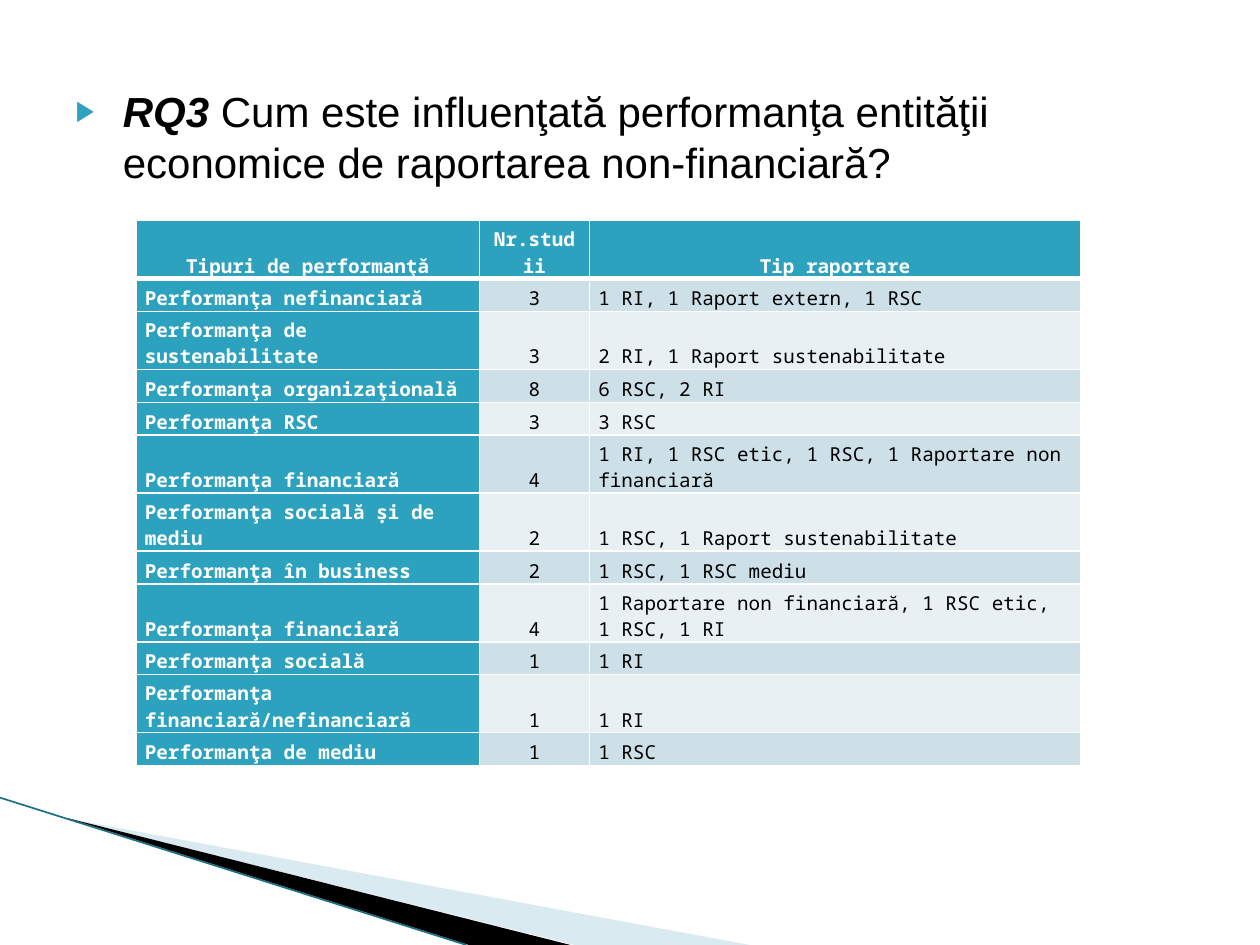
from lxml import etree
from pptx import Presentation
from pptx.dml.color import RGBColor
from pptx.enum import shapes, text
from pptx.oxml import ns
from pptx.util import Cm, Pt

HEX = {
    "teal": "2DA2BF", "deep": "1A7186", "pale": "A0CBDC",
    "odd": "CDE0E8", "even": "E8F0F4", "black": "000000", "white": "FFFFFF",
}
HEAD = ("Tipuri de performanţă", "Nr.studii", "Tip raportare")
# Kind of performance, number of studies, kind of report, lines of text
ROWS = [
    ("Performanţa nefinanciară", "3", "1 RI, 1 Raport extern, 1 RSC", 1),
    ("Performanţa de sustenabilitate", "3", "2 RI, 1 Raport sustenabilitate", 2),
    ("Performanţa organizaţională", "8", "6 RSC, 2 RI", 1),
    ("Performanţa RSC", "3", "3 RSC", 1),
    ("Performanţa financiară", "4",
     "1 RI, 1 RSC etic, 1 RSC, 1 Raportare non financiară", 2),
    ("Performanţa socială ṣi de mediu", "2", "1 RSC, 1 Raport sustenabilitate", 2),
    ("Performanţa în business", "2", "1 RSC, 1 RSC mediu", 1),
    ("Performanţa financiară", "4",
     "1 Raportare non financiară, 1 RSC etic, 1 RSC, 1 RI", 2),
    ("Performanţa socială", "1", "1 RI", 1),
    ("Performanţa financiară/nefinanciară", "1", "1 RI", 2),
    ("Performanţa de mediu", "1", "1 RSC", 1),
]
HIGH = {1: 0.66, 2: 1.17}


def rgb(name):
    return RGBColor.from_string(HEX[name])


def put(item, **vals):
    for key, val in vals.items():
        setattr(item, key, val)


def sub(node, tag, **vals):
    return etree.SubElement(node, ns.qn(tag), **vals)


def style(font, color, **vals):
    put(font, **vals)
    font.color.rgb = rgb(color)


def wedge(slide, left, top, points, color, alpha=None):
    spots = [(Cm(left + x), Cm(top + y)) for x, y in points]
    form = slide.shapes.build_freeform(*spots[0], scale=1.0)
    form.add_line_segments(spots[1:], close=True)
    shape = form.convert_to_shape()
    shape.shadow.inherit = False
    shape.fill.solid()
    shape.fill.fore_color.rgb = rgb(color)
    shape.line.fill.background()
    if alpha:
        tone = shape.fill._xPr.find(".//" + ns.qn("a:srgbClr"))
        sub(tone, "a:alpha", val=str(alpha * 1000))


def corner(slide, left, top, width, height):
    """Swoosh in the lower left corner."""
    wedge(slide, left, top,
          [(1.4, 0.43), (width, height), (11.58, height)], "pale", 40)
    wedge(slide, left, top,
          [(1.35, 0.41), (11.5, height), (9.45, height)], "black")
    edge = slide.shapes.add_connector(
        shapes.MSO_CONNECTOR.STRAIGHT,
        Cm(left), Cm(top), Cm(left + 9.4), Cm(top + height))
    edge.line.width = Pt(0.95)
    edge.line.color.rgb = rgb("deep")
    sub(edge._element.spPr, "a:effectLst")


def question(slide, left, top, width, height):
    """Research question in the body placeholder."""
    body = slide.placeholders[1]
    put(body, left=Cm(left), top=Cm(top), width=Cm(width), height=Cm(height))
    frame = body.text_frame
    put(frame, word_wrap=True, auto_size=text.MSO_AUTO_SIZE.NONE,
        vertical_anchor=text.MSO_ANCHOR.TOP)
    para = frame.paragraphs[0]
    props = para._p.get_or_add_pPr()
    put(props, marL=Cm(1.02), indent=Cm(-0.71))
    sub(sub(props, "a:buClr"), "a:srgbClr", val=HEX["teal"])
    sub(props, "a:buSzPct", val="68000")
    sub(props, "a:buFont", typeface="Arial")
    sub(props, "a:buChar", char="▶")
    put(para, space_before=Pt(0), alignment=text.PP_ALIGN.LEFT)
    parts = [("RQ3 ", True),
             ("Cum este influenţată performanţa entităţii economice "
              "de raportarea non-financiară?", False)]
    for words, strong in parts:
        run = para.add_run()
        run.text = words
        style(run.font, "black", name="Arial", size=Pt(24),
              bold=strong, italic=strong)


def border(cell, head):
    props = cell._tc.get_or_add_tcPr()
    for spot, side in enumerate(("a:lnL", "a:lnR", "a:lnT", "a:lnB")):
        wide = 3 if head and side == "a:lnB" else 1
        line = etree.Element(ns.qn(side), w=str(Pt(wide)))
        sub(sub(line, "a:solidFill"), "a:srgbClr", val=HEX["white"])
        props.insert(spot, line)


def fill_cell(cell, words, row, col):
    strong = row == 0 or col == 0
    put(cell, text=words, vertical_anchor=text.MSO_ANCHOR.BOTTOM,
        margin_left=Cm(0.18), margin_right=Cm(0.18),
        margin_top=0, margin_bottom=0)
    cell.fill.solid()
    shade = "teal" if strong else ("odd" if row % 2 else "even")
    cell.fill.fore_color.rgb = rgb(shade)
    border(cell, row == 0)
    para = cell.text_frame.paragraphs[0]
    mid = row == 0 or col == 1
    para.alignment = text.PP_ALIGN.CENTER if mid else text.PP_ALIGN.LEFT
    style(para.runs[0].font, "white" if strong else "black",
          name="Noto Sans Mono", size=Pt(11), bold=strong)


def studies(slide, left, top, widths):
    """Table of studies by kind of performance."""
    rows = [(*HEAD, 2)] + ROWS
    highs = [HIGH[row[-1]] for row in rows]
    table = slide.shapes.add_table(
        len(rows), len(HEAD), Cm(left), Cm(top),
        Cm(sum(widths)), Cm(sum(highs))).table
    put(table, first_row=True, first_col=True, horz_banding=False)
    for col, wide in zip(table.columns, widths):
        col.width = Cm(wide)
    for r, (row, high) in enumerate(zip(rows, highs)):
        table.rows[r].height = Cm(high)
        for c, words in enumerate(row[:-1]):
            fill_cell(table.cell(r, c), words, r, c)


def main():
    deck = Presentation()
    put(deck, slide_width=Cm(25.4), slide_height=Cm(19.05))
    slide = deck.slides.add_slide(deck.slide_layouts[1])
    title = slide.shapes.title._element
    title.getparent().remove(title)
    corner(slide, 0, 16.08, 15.11, 2.97)
    question(slide, 1.27, 1.6, 22.86, 15.09)
    studies(slide, 2.74, 4.45, (6.93, 2.21, 9.91))
    deck.save("out.pptx")


if __name__ == "__main__":
    main()
